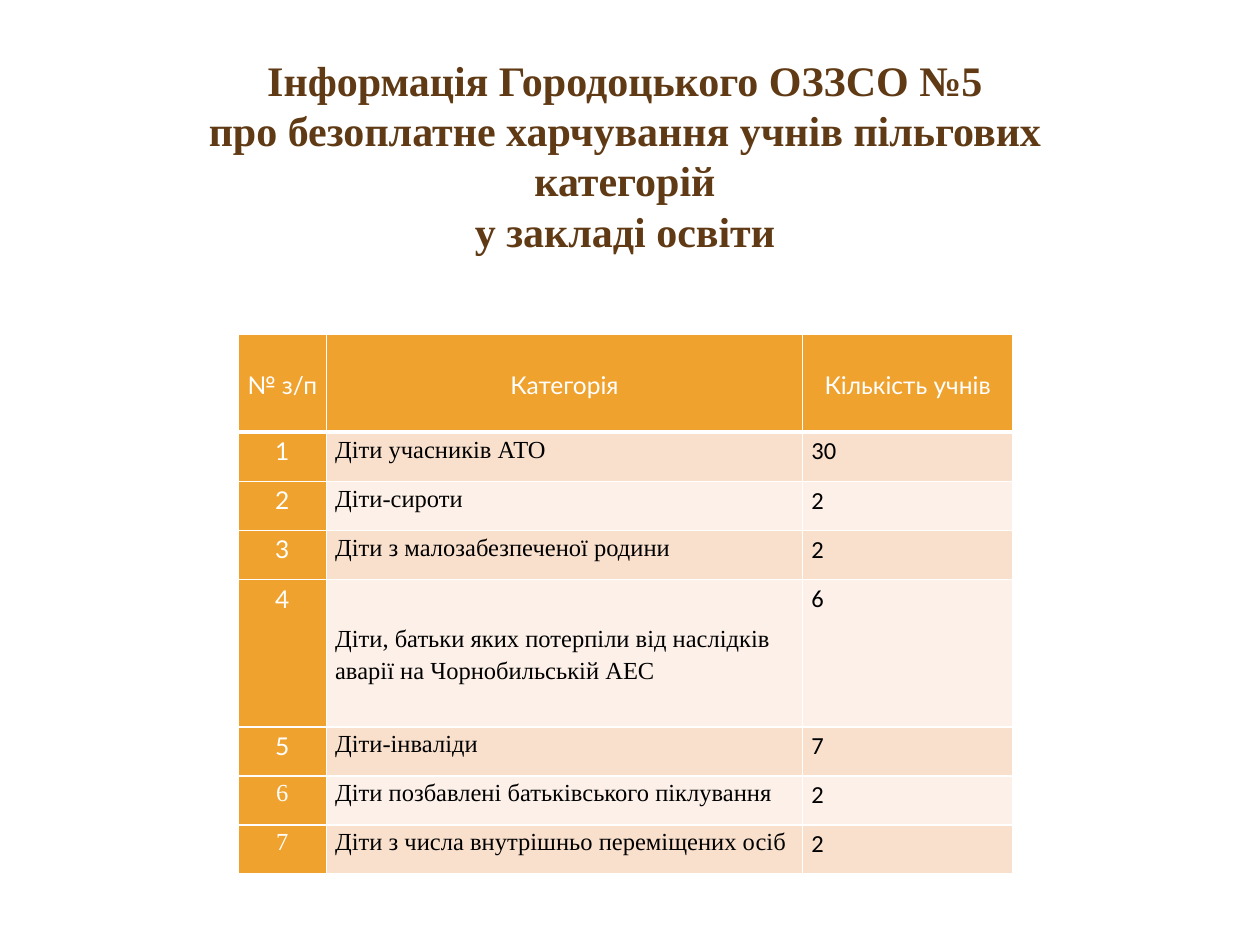
import pptx
import pptx.util
import pptx.dml.color
import pptx.enum.text
import pptx.oxml
import pptx.oxml.ns

Inches, Pt = pptx.util.Inches, pptx.util.Pt
RGBColor = pptx.dml.color.RGBColor
Align, Anchor = pptx.enum.text.PP_ALIGN, pptx.enum.text.MSO_ANCHOR

BROWN = RGBColor(0x60, 0x3A, 0x14)
ORANGE = RGBColor(0xF0, 0xA2, 0x2E)
PEACH = RGBColor(0xF9, 0xE0, 0xCD)
CREAM = RGBColor(0xFC, 0xF0, 0xE8)
WHITE = RGBColor(0xFF, 0xFF, 0xFF)
BLACK = RGBColor(0, 0, 0)
SERIF = "Times New Roman"

# Content
TITLE = ("Інформація Городоцького ОЗЗСО №5\v"
         "про безоплатне харчування учнів пільгових категорій\v"
         "у закладі освіти")
HEAD = ("№ з/п", "Категорія", "Кількість учнів")
GROUPS = [
    ("Діти учасників АТО", 30),
    ("Діти-сироти", 2),
    ("Діти з малозабезпеченої родини", 2),
    ("Діти, батьки яких потерпіли від наслідків аварії на Чорнобильській АЕС", 6),
    ("Діти-інваліди", 7),
    ("Діти позбавлені батьківського піклування", 2),
    ("Діти з числа внутрішньо переміщених осіб", 2),
]
COLS = (0.7, 3.78, 1.67)
LINE = 0.39
TALL = 4  # row whose text is centred in a triple height
SERIF_FROM = 6  # row numbers turn to serif here


def style(item, **values):
    for name, value in values.items():
        setattr(item, name, value)


def paint(font, color, **values):
    style(font, **values)
    font.color.rgb = color


def edge(cell, side, width):
    line = pptx.oxml.parse_xml(
        f'<a:ln{side} {pptx.oxml.ns.nsdecls("a")} w="{Pt(width)}">'
        f'<a:solidFill><a:srgbClr val="{WHITE}"/></a:solidFill></a:ln{side}>')
    cell._tc.get_or_add_tcPr().append(line)


def look(row, col):
    """Return fill, text colour, font and alignment of a cell."""
    if row == 0:
        return ORANGE, WHITE, "Lato", Align.CENTER
    if col == 0:
        return ORANGE, WHITE, SERIF if row >= SERIF_FROM else "Lato", Align.CENTER
    band = PEACH if row % 2 else CREAM
    return band, BLACK, SERIF if col == 1 else "Calibri", Align.LEFT


deck = pptx.Presentation()
style(deck, slide_width=Inches(10), slide_height=Inches(7.5))
slide = deck.slides.add_slide(deck.slide_layouts[6])

# Title
box = slide.shapes.add_textbox(Inches(1.22), Inches(0.29), Inches(7.48), Inches(2.06))
frame = box.text_frame
style(frame, word_wrap=True, vertical_anchor=Anchor.TOP, margin_left=Inches(0.1),
      margin_right=Inches(0.1), margin_top=Inches(0.14), margin_bottom=0)
para = frame.paragraphs[0]
style(para, text=TITLE, alignment=Align.CENTER)
for run in para.runs:
    paint(run.font, BROWN, name=SERIF, size=Pt(24), bold=True)

# Table
rows = [HEAD] + [(n, *group) for n, group in enumerate(GROUPS, 1)]
highs = [2 * LINE if r == 0 else 3 * LINE if r == TALL else LINE
         for r in range(len(rows))]
table = slide.shapes.add_table(len(rows), len(COLS), Inches(1.89), Inches(2.65),
                               Inches(sum(COLS)), Inches(sum(highs))).table
for col, width in zip(table.columns, COLS):
    col.width = Inches(width)
for r, (row, high) in enumerate(zip(rows, highs)):
    table.rows[r].height = Inches(high)
    for c, text in enumerate(row):
        cell = table.cell(r, c)
        fill, color, face, align = look(r, c)
        middle = r == 0 or (r, c) == (TALL, 1)
        style(cell, margin_left=Inches(0.07), margin_right=Inches(0.07),
              margin_top=0, margin_bottom=0,
              vertical_anchor=Anchor.MIDDLE if middle else Anchor.TOP)
        for side in "LRTB":
            thick = (r, side) in ((0, "B"), (1, "T"))
            edge(cell, side, 3 if thick else 1)
        cell.fill.solid()
        cell.fill.fore_color.rgb = fill
        para = cell.text_frame.paragraphs[0]
        style(para, text=str(text), alignment=align, line_spacing=1.15)
        paint(para.runs[0].font, color, name=face, size=Pt(14), bold=False)

deck.save("out.pptx")
